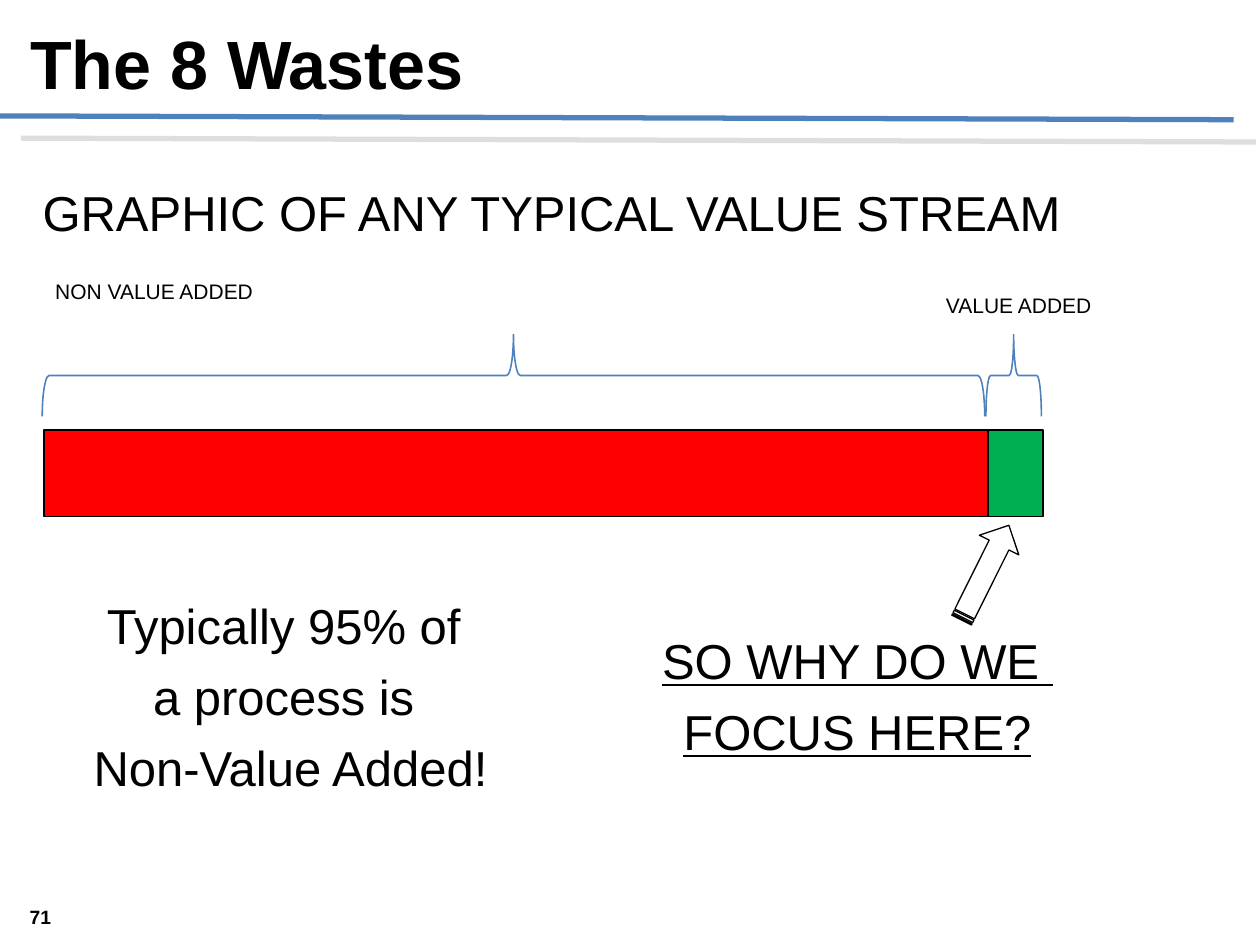
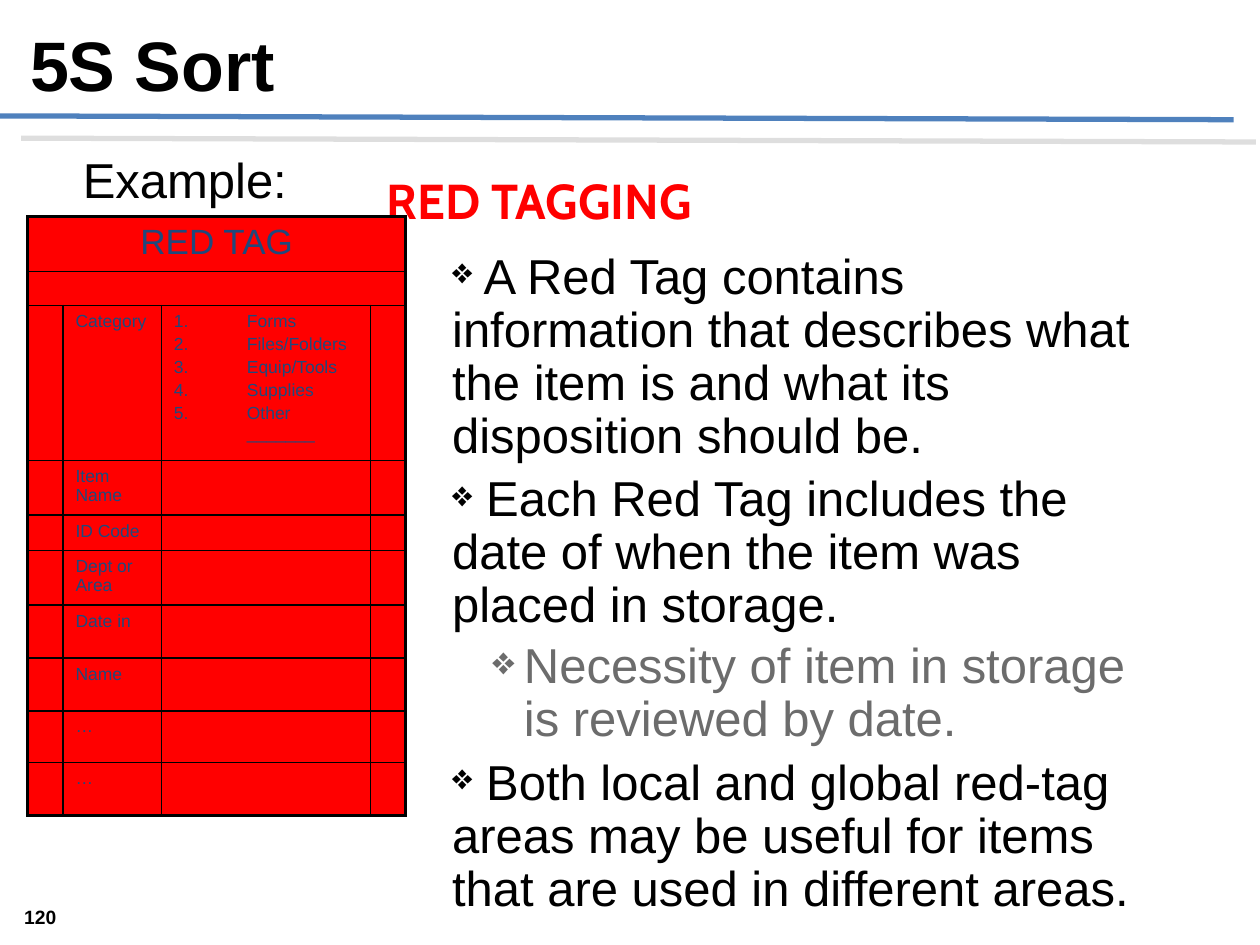
from lxml import etree
from pptx import Presentation
from pptx.dml.color import RGBColor
from pptx.enum import shapes, text
from pptx.oxml import ns
from pptx.util import Inches, Pt

COLORS = {"ink": "000000", "rule": "4F81BD", "shade": "808080", "waste": "FF0000",
          "value": "00B050", "paper": "FFFFFF", "tag": "1F497D", "note": "6C6C6C"}
COLORS_RGB = {name: RGBColor.from_string(code) for name, code in COLORS.items()}
SHAPE = shapes.MSO_SHAPE
CENTER = text.PP_ALIGN.CENTER
MIDDLE = text.MSO_ANCHOR.MIDDLE


def add_xml(parent, tag, **attributes):
    return etree.SubElement(parent, ns.qn(tag), attributes)


def write(frame, lines, size, color="ink", font="Arial", bold=False,
          align=None, anchor=None, before=0):
    """Fill a text frame or table cell, one paragraph per line."""
    if anchor is not None:
        frame.vertical_anchor = anchor
    frame = getattr(frame, "text_frame", frame)
    frame.text = "\n".join(lines)
    for para in frame.paragraphs:
        para.alignment = align
        para.space_before = Pt(before)
        para.font.size = Pt(size)
        para.font.name = font
        para.font.bold = bold
        para.font.color.rgb = COLORS_RGB[color]
    return frame.paragraphs


deck = Presentation()
deck.slide_width, deck.slide_height = Inches(10), Inches(7.5)

# Shared: rule with offset shadow, heading, page number
pages = []
for heading, heading_size, number in [("The 8 Wastes", 39, "71"), ("5S Sort", 40, "120")]:
    page = deck.slides.add_slide(deck.slide_layouts[6])
    pages.append(page)
    rule = page.shapes.add_connector(shapes.MSO_CONNECTOR.STRAIGHT, Inches(-0.01),
                                     Inches(0.92), Inches(9.79), Inches(0.95))
    rule.line.color.rgb = COLORS_RGB["rule"]
    rule.line.width = Pt(3)
    effects = add_xml(rule._element.spPr, "a:effectLst")
    shadow = add_xml(effects, "a:outerShdw", dist=str(Pt(18)), dir="2700000",
                     algn="ctr", rotWithShape="0")
    shade = add_xml(shadow, "a:srgbClr", val=COLORS["shade"])
    add_xml(shade, "a:alpha", val="25000")

    box = page.shapes.add_textbox(Inches(0.14), Inches(0.12), Inches(9.8), Inches(0.76))
    box.text_frame.word_wrap = True
    write(box.text_frame, [heading], heading_size, bold=True)

    box = page.shapes.add_textbox(0, Inches(7.12), Inches(0.64), Inches(0.25))
    frame = box.text_frame
    frame.margin_left = frame.margin_right = frame.margin_top = frame.margin_bottom = 0
    frame.word_wrap = True
    write(frame, [number], 11, bold=True, align=CENTER, anchor=text.MSO_ANCHOR.BOTTOM)

wastes, sort = pages

# Value stream: heading and labels
for label, size, place, anchor in [
    ("GRAPHIC OF ANY TYPICAL VALUE STREAM", 28, (0.24, 1.35, 9.53, 0.67), MIDDLE),
    ("NON VALUE ADDED", 12, (0.34, 2.16, 2.14, 0.39), None),
    ("VALUE ADDED", 12, (7.41, 2.27, 2.14, 0.39), None),
]:
    box = wastes.shapes.add_textbox(*map(Inches, place))
    box.text_frame.word_wrap = True
    write(box.text_frame, [label], size, anchor=anchor)

# Value stream: bar, braces and arrow
for kind, place, turn, fill, line, width in [
    (SHAPE.RECTANGLE, (0.35, 3.41, 7.49, 0.69), 0, "waste", "ink", 1),
    (SHAPE.RECTANGLE, (7.84, 3.41, 0.44, 0.69), 0, "value", "ink", 1),
    (SHAPE.LEFT_BRACE, (3.75, -0.76, 0.65, 7.48), 90, None, "rule", 0.9),
    (SHAPE.LEFT_BRACE, (7.72, 2.76, 0.65, 0.44), 90, None, "rule", 0.9),
    (SHAPE.STRIPED_RIGHT_ARROW, (7.4, 4.37, 0.84, 0.35), 296.5, "paper", "ink", 0.75),
]:
    shape = wastes.shapes.add_shape(kind, *map(Inches, place))
    shape.rotation = turn
    shape.shadow.inherit = False
    shape.line.color.rgb = COLORS_RGB[line]
    shape.line.width = Pt(width)
    if fill:
        shape.fill.solid()
        shape.fill.fore_color.rgb = COLORS_RGB[fill]
    else:
        shape.fill.background()

# Value stream: statement and question
for left, lines, underline in [
    (0.56, ["Typically 95% of ", "a process is ", "Non-Value Added!"], False),
    (5.06, ["SO WHY DO WE ", "FOCUS HERE?"], True),
]:
    box = wastes.shapes.add_textbox(Inches(left), Inches(4.73), Inches(3.49), Inches(1.58))
    box.text_frame.word_wrap = False
    for para in write(box.text_frame, lines, 28, align=CENTER, anchor=MIDDLE, before=7):
        para.font.underline = underline

# Red tagging: subtitle and bullets
box = sort.shapes.add_textbox(Inches(2.97), Inches(1.3), Inches(4), Inches(0.75))
box.text_frame.word_wrap = True
write(box.text_frame, ["RED TAGGING"], 28, "waste", "Cabin", bold=True)

points = [
    " A Red Tag contains information that describes what the item is and what its "
    "disposition should be.",
    " Each Red Tag includes the date of when the item was placed in storage.",
    "Necessity of item in storage is reviewed by date.",
    " Both local and global red-tag areas may be useful for items that are used in "
    "different areas.",
]
box = sort.shapes.add_textbox(Inches(3.49), Inches(1.95), Inches(5.78), Inches(5.33))
box.text_frame.word_wrap = True
for index, para in enumerate(write(box.text_frame, points, 28, before=6)):
    para.line_spacing = 0.9
    props = para._p.get_or_add_pPr()
    bullet_size = "73000"
    if index == 2:
        para.level = 1
        para.space_before = Pt(5)
        para.font.color.rgb = COLORS_RGB["note"]
        props.set("marL", str(Inches(0.57)))
        props.set("indent", str(Inches(-0.25)))
        bullet_size = "80000"
    bullet = etree.Element(ns.qn("a:buChar"), char="❖")
    scale = etree.Element(ns.qn("a:buSzPct"), val=bullet_size)
    defaults = props.find(ns.qn("a:defRPr"))
    defaults.addprevious(scale)
    defaults.addprevious(bullet)

# Red tag form
widths = [0.28, 0.78, 1.66, 0.28]
heights = [0.43, 0.27, 1.23, 0.43, 0.28, 0.43, 0.42, 0.42, 0.41, 0.42]
fields = ["Category", "Item Name", "ID Code", "Dept or Area", "Date in", "Name", "…", "…"]
categories = ["Forms", "Files/Folders", "Equip/Tools", "Supplies", "Other _______"]
last_row, last_column = len(heights) - 1, len(widths) - 1
table = sort.shapes.add_table(len(heights), len(widths), Inches(0.22), Inches(1.72),
                              Inches(sum(widths)), Inches(sum(heights))).table
table.first_row = table.horz_banding = False
for column, width in zip(table.columns, widths):
    column.width = Inches(width)
for row, height in zip(table.rows, heights):
    row.height = Inches(height)
for row in (0, 1):
    table.cell(row, 0).merge(table.cell(row, last_column))

for row in range(len(heights)):
    for column in range(len(widths)):
        cell = table.cell(row, column)
        lines, size, align = [""], 10, None
        if (row, column) == (0, 0):
            lines, size, align = ["RED TAG"], 20, CENTER
        elif row >= 2 and column == 1:
            lines = [fields[row - 2]]
        elif (row, column) == (2, 2):
            lines = categories
        paras = write(cell, lines, size, "tag", align=align, before=size * 0.2)
        if lines is categories:
            for para in paras:
                props = para._p.get_or_add_pPr()
                props.set("marL", str(Inches(0.58)))
                props.set("indent", str(Inches(-0.58)))
                numbering = etree.Element(ns.qn("a:buAutoNum"), type="arabicPeriod")
                props.find(ns.qn("a:defRPr")).addprevious(numbering)
        outer_edges = {"L": column == 0, "R": column == last_column or row < 2,
                       "T": row == 0, "B": row == last_row}
        for side, outer in outer_edges.items():
            border = add_xml(cell._tc.get_or_add_tcPr(), "a:ln" + side,
                             w=str(Pt(2.25 if outer else 1)))
            add_xml(add_xml(border, "a:solidFill"), "a:srgbClr", val=COLORS["ink"])
        cell.fill.solid()
        cell.fill.fore_color.rgb = COLORS_RGB["waste"]

# Form caption
box = sort.shapes.add_textbox(Inches(0.56), Inches(1.14), Inches(2.17), Inches(0.57))
box.text_frame.word_wrap = True
write(box.text_frame, ["Example:"], 28)

deck.save("out.pptx")
